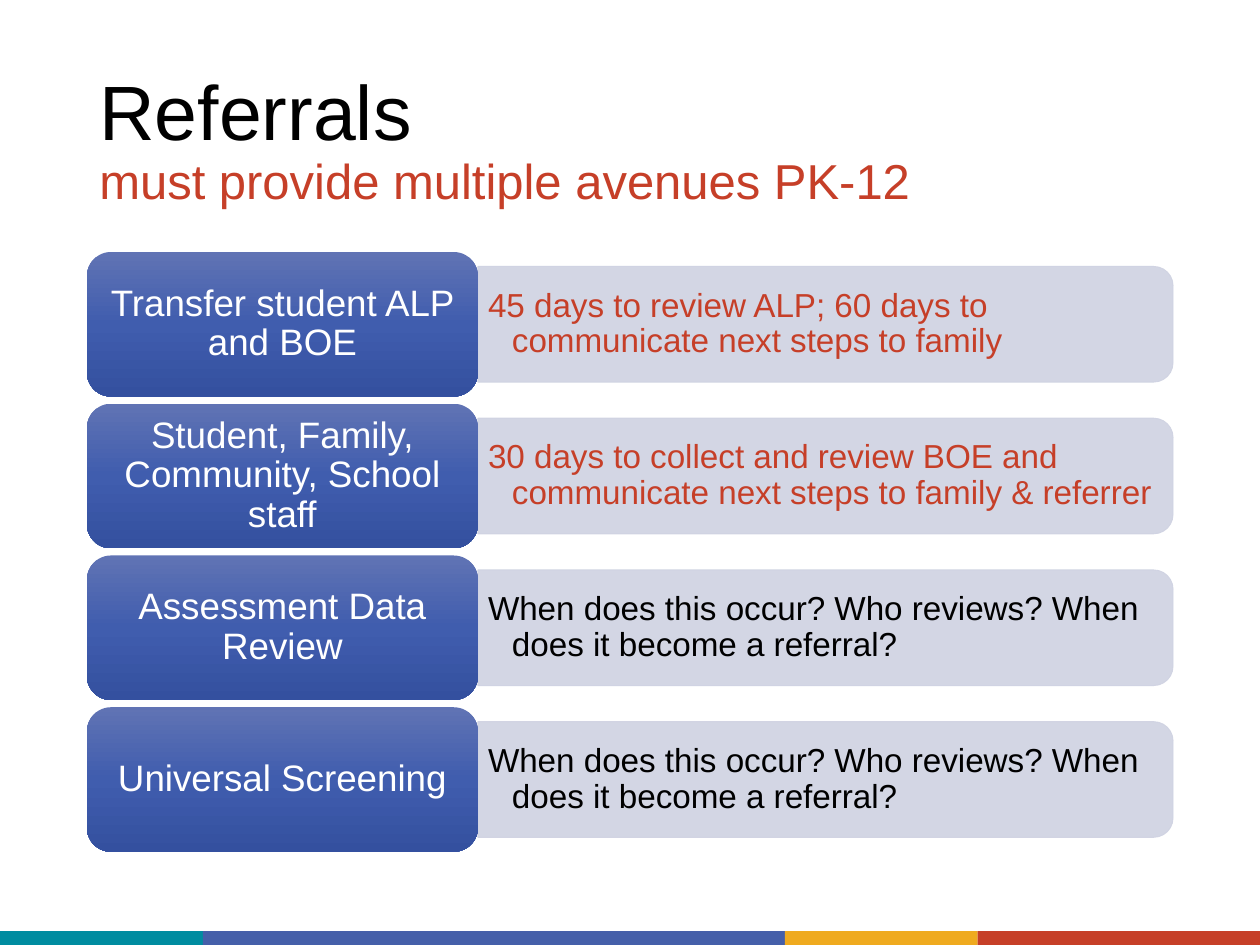
from copy import deepcopy
from dataclasses import dataclass

from lxml import etree
from pptx import Presentation
from pptx import util as u
from pptx.dml.color import RGBColor
from pptx.enum import shapes, text
from pptx.oxml.ns import qn

BLACK = RGBColor(0x00, 0x00, 0x00)
WHITE = RGBColor(0xFF, 0xFF, 0xFF)
RED = RGBColor(0xC6, 0x3F, 0x28)
GOLD = RGBColor(0xEF, 0xAA, 0x1F)
TEAL = RGBColor(0x00, 0x8C, 0xA0)
BLUE = RGBColor(0x45, 0x5F, 0xA9)
PALE = RGBColor(0xCF, 0xD2, 0xE2)
CARD_STOPS = (
    (0, RGBColor(0x60, 0x73, 0xB4)),
    (0.5, RGBColor(0x40, 0x5D, 0xAE)),
    (1, RGBColor(0x34, 0x50, 0x9F)),
)

FONT = "Arial"
PAGE_W, PAGE_H = 10, 7.5
LEFT, WIDTH = 0.69, 8.62
ROWS_TOP, ROWS_HEIGHT = 2, 4.76
GAP_SHARE = 0.05
CARD_W = WIDTH * 0.36
BAR_W = WIDTH - CARD_W
BAR_SHARE = 0.8
STRIP_H = 0.11


@dataclass(frozen=True)
class Referral:
    source: str
    action: str
    color: RGBColor


@dataclass(frozen=True)
class Band:
    share: float
    color: RGBColor


REVIEW = "When does this occur? Who reviews? When does it become a referral?"
REFERRALS = (
    Referral("Transfer student ALP and BOE",
             "45 days to review ALP; 60 days to communicate next steps to family", RED),
    Referral("Student, Family, Community, School staff",
             "30 days to collect and review BOE and communicate next steps to family & referrer", RED),
    Referral("Assessment Data Review", REVIEW, BLACK),
    Referral("Universal Screening", REVIEW, BLACK),
)
BANDS = (Band(0.161, TEAL), Band(0.462, BLUE), Band(0.153, GOLD), Band(0.224, RED))


def add_shape(page, kind, left: float, top: float, width: float, height: float):
    shape = page.shapes.add_shape(kind, *map(u.Inches, (left, top, width, height)))
    shape.shadow.inherit = False
    shape.line.fill.background()
    return shape


def add_box(page, left: float, top: float, width: float, height: float):
    return page.shapes.add_textbox(*map(u.Inches, (left, top, width, height)))


def prepare_text(shape, inset_x: float, inset_y: float):
    frame = shape.text_frame
    frame.word_wrap = True
    frame.vertical_anchor = text.MSO_ANCHOR.MIDDLE
    frame.margin_left = frame.margin_right = u.Inches(inset_x)
    frame.margin_top = frame.margin_bottom = u.Inches(inset_y)
    para = frame.paragraphs[0]
    para.line_spacing = 0.9
    para.font.name = FONT
    return para


def set_font(para, size: float, color: RGBColor) -> None:
    para.font.size = u.Pt(size)
    para.font.color.rgb = color


def set_alpha(format_parent, percent: int) -> None:
    for color in format_parent.iter(qn("a:srgbClr")):
        etree.SubElement(color, qn("a:alpha")).set("val", str(percent * 1000))


def fill_card(card) -> None:
    card.fill.gradient()
    card.fill.gradient_angle = 270
    first = card._element.spPr.find(".//" + qn("a:gs"))
    first.addnext(deepcopy(first))
    for stop, (position, color) in zip(card.fill.gradient_stops, CARD_STOPS):
        stop.position = position
        stop.color.rgb = color


def add_title(page) -> None:
    para = prepare_text(add_box(page, LEFT, 0.4, WIDTH, 1.45), 0.1, 0.05)
    heading = para.add_run()
    heading.text = "Referrals"
    set_font(heading, 44, BLACK)
    para.add_line_break()
    subtitle = para.add_run()
    subtitle.text = "must provide multiple avenues PK-12"
    set_font(subtitle, 28, RED)


def add_bar(page, top: float, height: float) -> None:
    center_x, center_y = LEFT + CARD_W + BAR_W / 2, top + height / 2
    bar = add_shape(page, shapes.MSO_SHAPE.ROUND_2_SAME_RECTANGLE,
                    center_x - height / 2, center_y - BAR_W / 2, height, BAR_W)
    bar.rotation = 90
    bar.fill.solid()
    bar.fill.fore_color.rgb = PALE
    bar.line.color.rgb = PALE
    bar.line.width = u.Pt(0.5)
    set_alpha(bar._element.spPr, 90)


def add_referral(page, referral: Referral, top: float, height: float) -> None:
    bar_h = height * BAR_SHARE
    bar_top = top + (height - bar_h) / 2
    add_bar(page, bar_top, bar_h)

    action = add_box(page, LEFT + CARD_W, bar_top + 0.04, BAR_W - 0.04, bar_h - 0.08)
    para = prepare_text(action, 0.08, 0.04)
    para.text = referral.action
    set_font(para, 19, referral.color)
    properties = para._p.get_or_add_pPr()
    properties.set("marL", str(u.Inches(0.19)))
    properties.set("indent", str(u.Inches(-0.19)))

    card = add_shape(page, shapes.MSO_SHAPE.ROUNDED_RECTANGLE, LEFT, top, CARD_W, height)
    fill_card(card)
    para = prepare_text(card, 0.09, 0.04)
    para.text = referral.source
    para.alignment = text.PP_ALIGN.CENTER
    set_font(para, 21, WHITE)


def add_strip(page) -> None:
    left = 0.0
    for band in BANDS:
        width = band.share * PAGE_W
        block = add_shape(page, shapes.MSO_SHAPE.RECTANGLE,
                          left, PAGE_H - STRIP_H, width, STRIP_H)
        block.fill.solid()
        block.fill.fore_color.rgb = band.color
        left += width


def main() -> None:
    deck = Presentation()
    deck.slide_width, deck.slide_height = u.Inches(PAGE_W), u.Inches(PAGE_H)
    page = deck.slides.add_slide(deck.slide_layouts[6])
    add_strip(page)
    add_title(page)
    count = len(REFERRALS)
    height = ROWS_HEIGHT / (count + (count - 1) * GAP_SHARE)
    for row, referral in enumerate(REFERRALS):
        add_referral(page, referral, ROWS_TOP + row * height * (1 + GAP_SHARE), height)
    deck.save("out.pptx")


if __name__ == "__main__":
    main()
